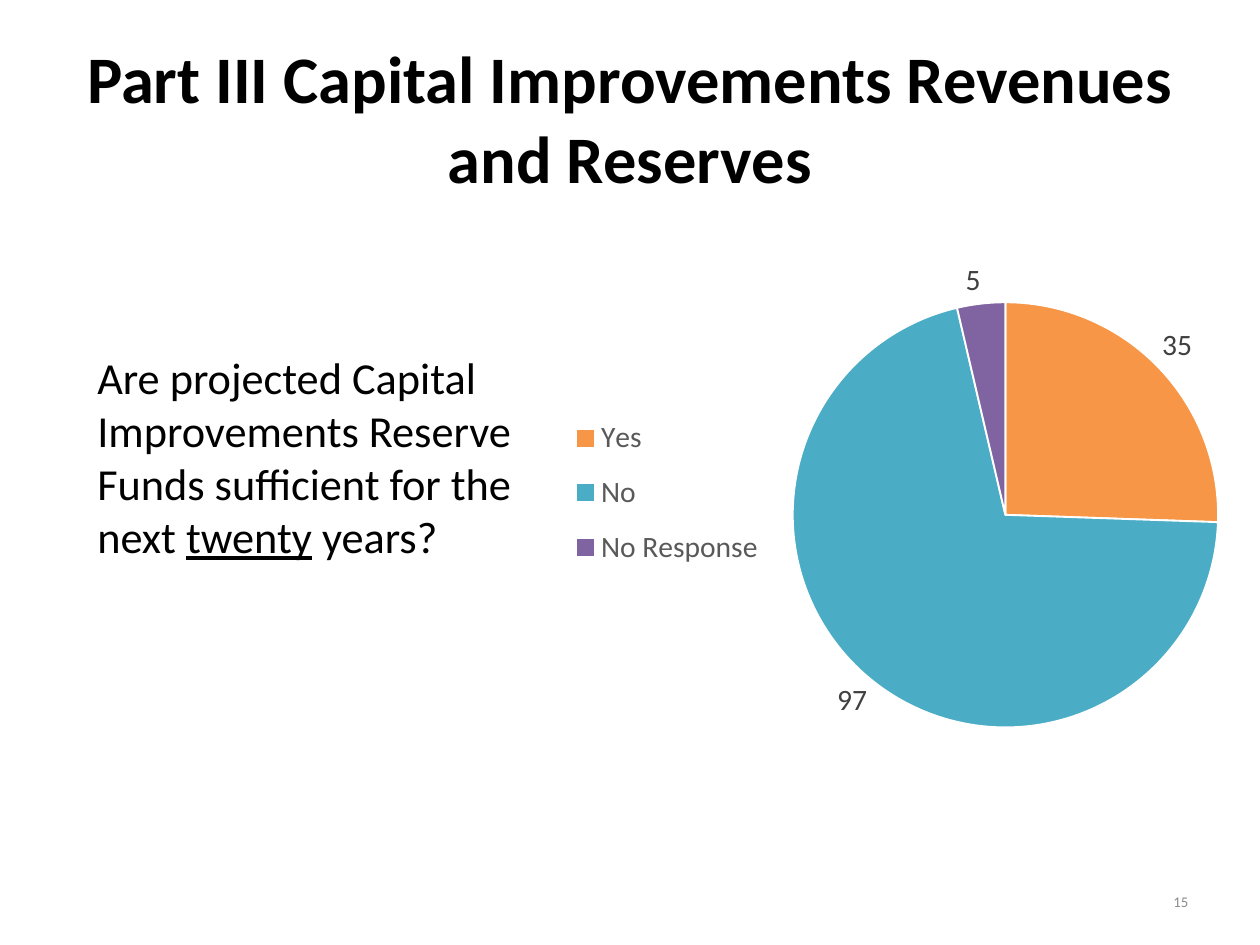
from lxml import etree
from pptx import Presentation, util as u
from pptx.chart.data import CategoryChartData
from pptx.dml.color import RGBColor
from pptx.enum import chart as ch, text
from pptx.oxml import ns


def style(font, color, **values):
    font.color.rgb = RGBColor.from_string(color)
    for name, value in {"name": "Calibri", **values}.items():
        setattr(font, name, value)


def set_layout(element, target, x, y, w, h):
    for old in element.findall(ns.qn("c:layout")):
        element.remove(old)
    layout = etree.Element(ns.qn("c:layout"))
    manual = etree.SubElement(layout, ns.qn("c:manualLayout"))
    settings = {"layoutTarget": target, "xMode": "edge", "yMode": "edge",
                "x": x, "y": y, "w": w, "h": h}
    for tag, value in settings.items():
        if value is not None:
            etree.SubElement(manual, ns.qn(f"c:{tag}")).set("val", str(value))
    position = element.find(ns.qn("c:legendPos"))
    if position is None:
        element.insert(0, layout)
    else:
        position.addnext(layout)


deck = Presentation()
deck.slide_width, deck.slide_height = u.Inches(14.22), u.Inches(10.67)
slide = deck.slides.add_slide(deck.slide_layouts[5])

heading = slide.shapes.title
places = {"left": 0.71, "top": 0.43, "width": 12.8, "height": 1.78}
for side, length in places.items():
    setattr(heading, side, u.Inches(length))
heading.text_frame.text = "Part III Capital Improvements Revenues and Reserves"
heading.text_frame.vertical_anchor = text.MSO_ANCHOR.MIDDLE
heading_line = heading.text_frame.paragraphs[0]
heading_line.alignment = text.PP_ALIGN.CENTER
style(heading_line.runs[0].font, "000000", size=u.Pt(54), bold=True)

question = slide.shapes.add_textbox(*map(u.Inches, (1, 3.9, 5.64, 2.59))).text_frame
question.word_wrap = True
question_parts = [
    ("Are projected Capital Improvements Reserve Funds sufficient for the next ", False),
    ("twenty", True),
    (" years?", False),
]
for words, underline in question_parts:
    part = question.paragraphs[0].add_run()
    part.text = words
    style(part.font, "000000", size=u.Pt(36), underline=underline)

page = slide.shapes.add_textbox(*map(u.Inches, (10.19, 9.89, 3.32, 0.57))).text_frame
page.word_wrap = True
page.vertical_anchor = text.MSO_ANCHOR.MIDDLE
page.text = "15"
page.paragraphs[0].alignment = text.PP_ALIGN.RIGHT
style(page.paragraphs[0].runs[0].font, "8C8C8C", size=u.Pt(12))

answers = [("Yes", 35, "F79646"), ("No", 97, "4BACC6"), ("No Response", 5, "8064A2")]
answer_data = CategoryChartData(number_format="General")
answer_data.categories = [answer for answer, count, color in answers]
answer_data.add_series("Series 1", [count for answer, count, color in answers])
pie = slide.shapes.add_chart(
    ch.XL_CHART_TYPE.PIE, *map(u.Inches, (6.35, 2.85, 7.87, 6.24)), answer_data
).chart
style(pie.font, "000000", size=u.Pt(10))
pie.has_title = False
pie.has_legend = True
pie.legend.position = ch.XL_LEGEND_POSITION.LEFT
pie.legend.include_in_layout = False
style(pie.legend.font, "595959", size=u.Pt(24))

plot = pie.plots[0]
plot.vary_by_categories = True
for index, (answer, count, color) in enumerate(answers):
    slice_format = plot.series[0].points[index].format
    slice_format.fill.solid()
    slice_format.fill.fore_color.rgb = RGBColor.from_string(color)
    slice_format.line.color.rgb = RGBColor.from_string("FFFFFF")
    slice_format.line.width = u.Pt(1.5)

counts = plot.series[0].data_labels
counts.show_value = True
counts.position = ch.XL_LABEL_POSITION.OUTSIDE_END
style(counts.font, "404040", size=u.Pt(24))

plot_area = pie.element.find(".//" + ns.qn("c:plotArea"))
set_layout(plot_area, "inner", 0.33, 0.09, 0.61, 0.77)
set_layout(pie.legend.element if hasattr(pie.legend, "element")
           else pie.element.find(".//" + ns.qn("c:legend")), None, 0.01, 0.27, 0.28, 0.33)

deck.save("out.pptx")
